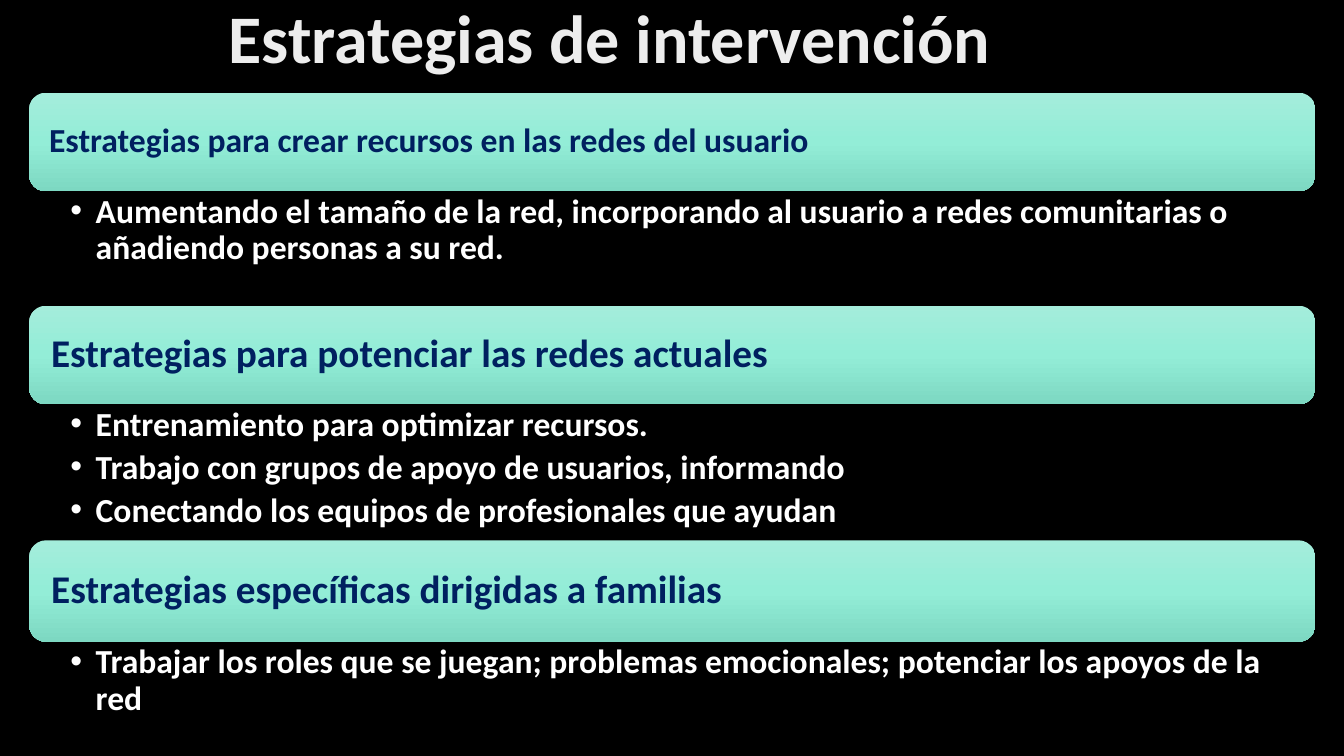
from copy import deepcopy

from lxml import etree
from pptx import Presentation
from pptx.dml.color import RGBColor
from pptx.enum.shapes import MSO_SHAPE
from pptx.enum.text import MSO_ANCHOR, PP_ALIGN
from pptx.oxml.ns import qn
from pptx.util import Inches, Pt

ROUNDED = MSO_SHAPE.ROUNDED_RECTANGLE
MIDDLE, TOP = MSO_ANCHOR.MIDDLE, MSO_ANCHOR.TOP
LEFT = PP_ALIGN.LEFT

BLACK = RGBColor(0x00, 0x00, 0x00)
WHITE = RGBColor(0xFF, 0xFF, 0xFF)
SILVER = RGBColor(0xED, 0xED, 0xED)
NAVY = RGBColor(0x00, 0x20, 0x60)
MINT_STOPS = [
    (0, RGBColor(0xA4, 0xED, 0xDB)),
    (0.5, RGBColor(0x93, 0xED, 0xD7)),
    (1, RGBColor(0x7D, 0xD8, 0xC2)),
]

COLUMNS, ROWS = 80, 45
BAND_LEFT, BAND_WIDTH = 1.74, 76.56
STACK_TOP = 5.52

SECTIONS = [
    ("Estrategias para crear recursos en las redes del usuario", 24, 0.15, 5.86, 6.82,
     ["Aumentando el tamaño de la red, incorporando al usuario a redes comunitarias "
      "o añadiendo personas a su red."]),
    ("Estrategias para potenciar las redes actuales", 28, 0.17, 5.86, 8.1,
     ["Entrenamiento para optimizar recursos.",
      "Trabajo con grupos de apoyo de usuarios, informando",
      "Conectando los equipos de profesionales que ayudan"]),
    ("Estrategias específicas dirigidas a familias", 28, 0.17, 6.04, 6.82,
     ["Trabajar los roles que se juegan; problemas emocionales; "
      "potenciar los apoyos de la red"]),
]


def apply(target, values):
    for name, value in values.items():
        setattr(target, name, value)


class StrategyPage:
    font_name = "Calibri"
    line_spacing = 0.9

    def __init__(self, deck):
        self.deck = deck
        self.page = deck.slides.add_slide(deck.slide_layouts[6])
        background = self.page.background.fill
        background.solid()
        background.fore_color.rgb = BLACK

    def place(self, left, top, width, height):
        column = self.deck.slide_width / COLUMNS
        row = self.deck.slide_height / ROWS
        return (round(left * column), round(top * row),
                round(width * column), round(height * row))

    def fill_text(self, shape, lines, size, color, anchor, insets, bulleted=False):
        frame = shape.text_frame
        sides = ("margin_left", "margin_top", "margin_right", "margin_bottom")
        apply(frame, {"word_wrap": True, "vertical_anchor": anchor})
        apply(frame, dict(zip(sides, map(Inches, insets))))
        for index, line in enumerate(lines):
            para = frame.paragraphs[0] if index == 0 else frame.add_paragraph()
            apply(para, {"alignment": LEFT, "line_spacing": self.line_spacing})
            if bulleted:
                para.space_after = Pt(size * 0.2)
                self.add_bullet(para)
            span = para.add_run()
            span.text = line
            apply(span.font, {"name": self.font_name, "size": Pt(size), "bold": True})
            span.font.color.rgb = color

    def add_bullet(self, para):
        properties = para._p.get_or_add_pPr()
        properties.set("marL", str(Inches(0.25)))
        properties.set("indent", str(-Inches(0.25)))
        etree.SubElement(properties, qn("a:buFont")).set("typeface", "Arial")
        etree.SubElement(properties, qn("a:buChar")).set("char", "•")

    def paint_gradient(self, shape):
        fill = shape.fill
        fill.gradient()
        fill.gradient_angle = 270
        stop_list = shape._element.spPr.find(qn("a:gradFill")).find(qn("a:gsLst"))
        stop_list.insert(1, deepcopy(stop_list[0]))
        for stop, (position, color) in zip(fill.gradient_stops, MINT_STOPS):
            stop.position = position
            stop.color.rgb = color

    def title(self, text):
        box = self.page.shapes.add_textbox(*self.place(13.02, 0.84, 54, 3.24))
        self.fill_text(box, [text], 48.6, SILVER, MIDDLE, (0.1, 0.05, 0.1, 0.05))

    def band(self, text, size, inset, top, height):
        box = self.page.shapes.add_shape(
            ROUNDED, *self.place(BAND_LEFT, top, BAND_WIDTH, height))
        box.shadow.inherit = False
        box.line.fill.background()
        self.paint_gradient(box)
        self.fill_text(box, [text], size, NAVY, MIDDLE, (inset,) * 4)

    def bullets(self, lines, top, height):
        box = self.page.shapes.add_textbox(
            *self.place(BAND_LEFT, top, BAND_WIDTH, height))
        self.fill_text(box, lines, 24, WHITE, TOP, (0.41, 0.03, 0.19, 0.03), True)


def main():
    deck = Presentation()
    apply(deck, {"slide_width": Inches(13.33), "slide_height": Inches(7.5)})
    strategies = StrategyPage(deck)
    strategies.title("Estrategias de intervención")
    top = STACK_TOP
    for heading, size, inset, band_height, list_height, lines in SECTIONS:
        strategies.band(heading, size, inset, top, band_height)
        strategies.bullets(lines, top + band_height, list_height)
        top += band_height + list_height
    deck.save("out.pptx")


if __name__ == "__main__":
    main()
